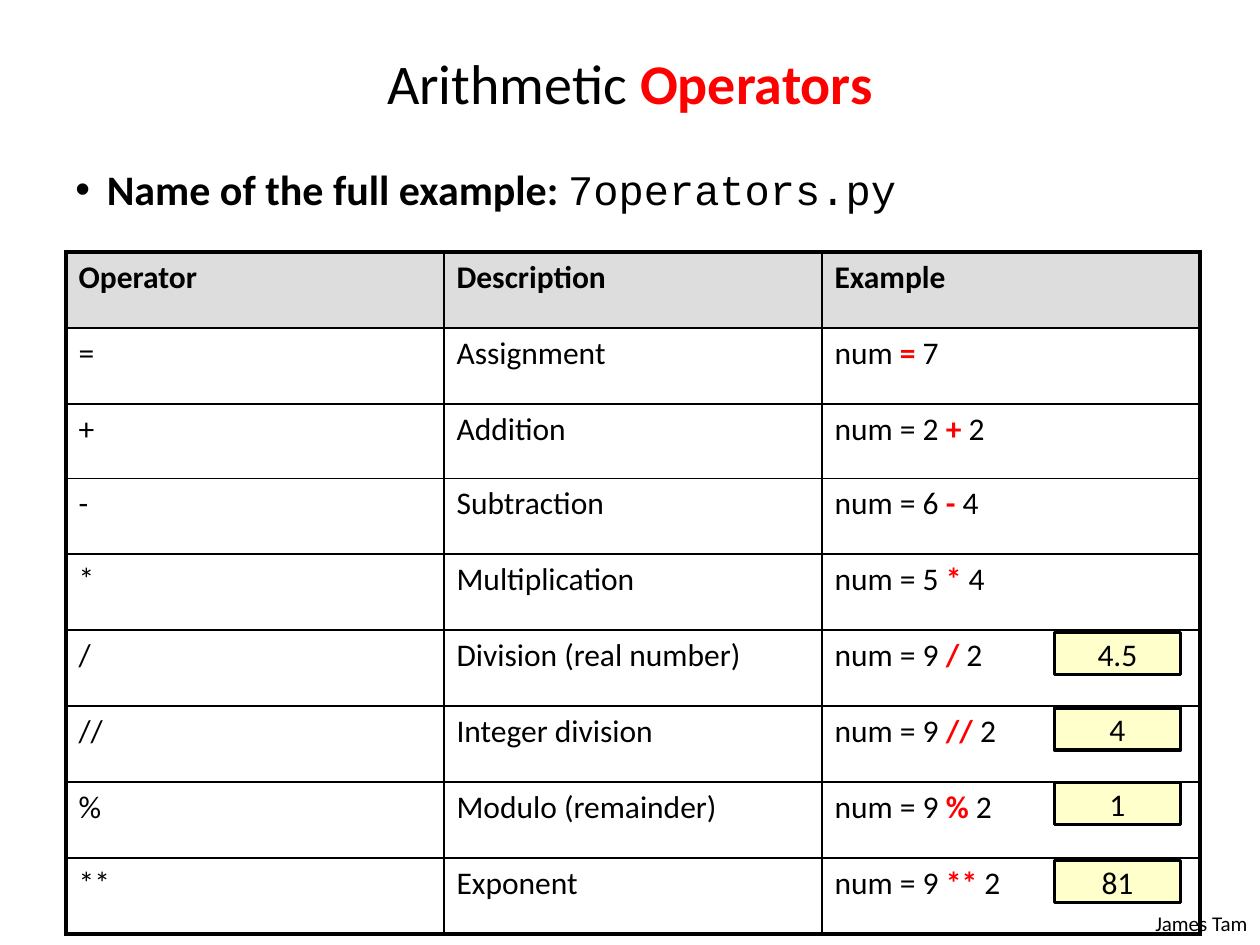
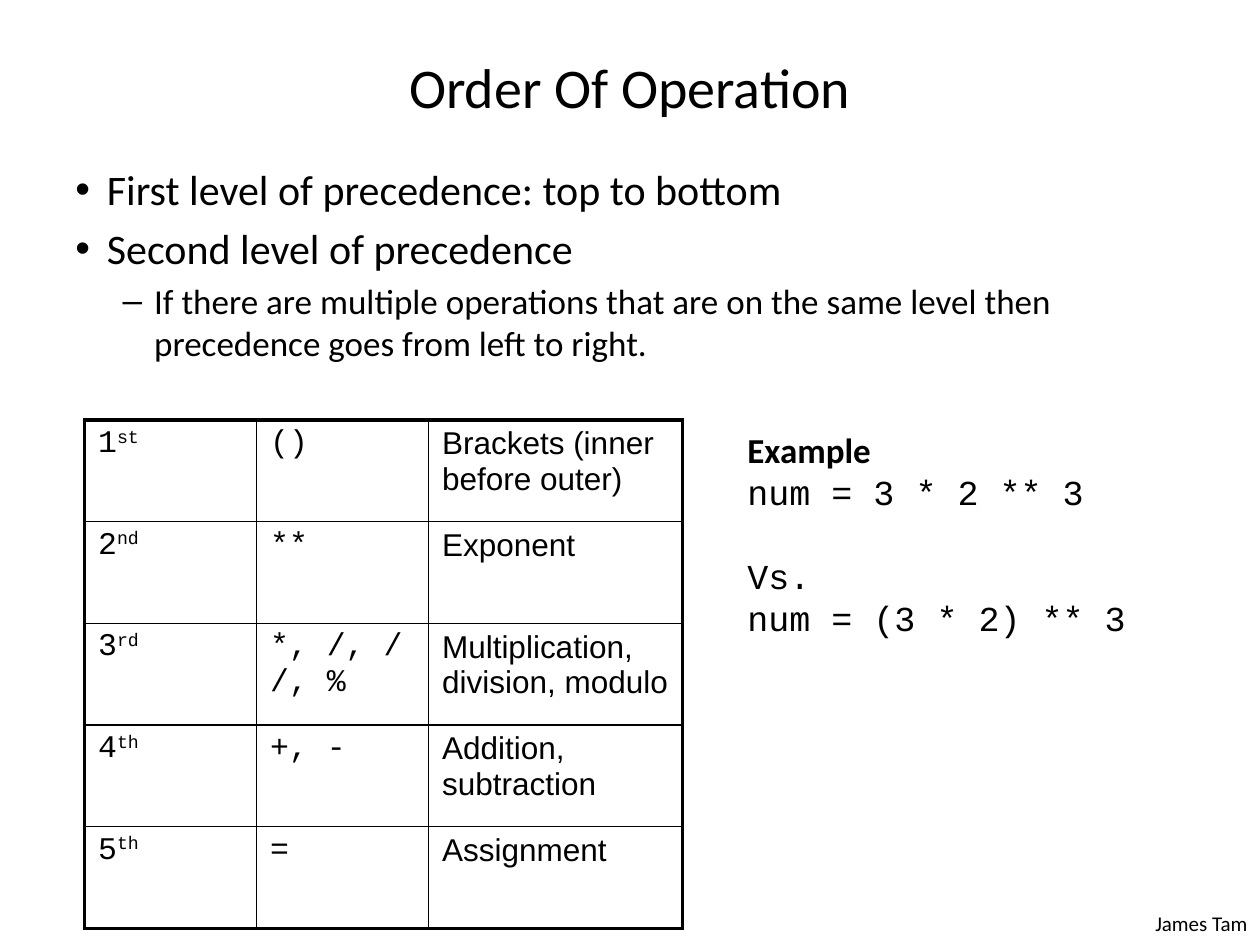
"""Build two slides on arithmetic operators and their order of operation."""
from dataclasses import dataclass, replace

from lxml.etree import SubElement
from pptx import Presentation
from pptx.dml.color import RGBColor
from pptx.enum.shapes import MSO_SHAPE as Shape
from pptx.enum.text import MSO_ANCHOR as Anchor, PP_ALIGN as Align
from pptx.oxml.ns import qn
from pptx.util import Pt

BLACK = RGBColor(0, 0, 0)
RED = RGBColor(255, 0, 0)
HEADER_GREY = RGBColor(0xDD, 0xDD, 0xDD)
RESULT_YELLOW = RGBColor(0xFF, 0xFF, 0xCC)
SANS, MONO, ARIAL = "Calibri", "Courier New", "Arial"
THIN, THICK = 1, 2.25

OPERATORS = [
    ("=", "Assignment", "num ", "=", " 7"),
    ("+", "Addition", "num = 2 ", "+", " 2"),
    ("-", "Subtraction", "num = 6 ", "-", " 4"),
    ("*", "Multiplication", "num = 5 ", "*", " 4"),
    ("/", "Division (real number)", "num = 9 ", "/", " 2"),
    ("//", "Integer division", "num = 9 ", "//", " 2"),
    ("%", "Modulo (remainder)", "num = 9 ", "%", " 2"),
    ("**", "Exponent", "num = 9 ", "**", " 2"),
]
RESULTS = [("4.5", 361.5), ("4", 404.6), ("1", 447.1), ("81", 491.8)]
PRECEDENCE = [
    ("1", "st", "()", "Brackets (inner before outer)"),
    ("2", "nd", "**", "Exponent"),
    ("3", "rd", "*, /, //, %", "Multiplication, division, modulo"),
    ("4", "th", "+, -", "Addition, subtraction"),
    ("5", "th", "=", "Assignment"),
]


@dataclass
class Span:
    """A stretch of text in one style."""
    text: str
    size: float = 18
    font: str = SANS
    color: RGBColor = BLACK
    bold: bool = False
    raised: bool = False


def write_spans(para, spans, align=Align.LEFT):
    """Fill a paragraph with styled spans."""
    para.alignment = align
    for span in spans:
        run = para.add_run()
        run.text = span.text
        font = run.font
        font.name, font.size, font.bold = span.font, Pt(span.size), span.bold
        font.color.rgb = span.color
        if span.raised:
            font._element.set("baseline", "30000")


def add_box(page, left, top, width, height, paragraphs, align=Align.LEFT, anchor=Anchor.TOP):
    """Add a wrapping text box and return its paragraphs."""
    box = page.shapes.add_textbox(Pt(left), Pt(top), Pt(width), Pt(height))
    frame = box.text_frame
    frame.word_wrap = True
    frame.vertical_anchor = anchor
    for index, spans in enumerate(paragraphs):
        para = frame.add_paragraph() if index else frame.paragraphs[0]
        write_spans(para, spans, align)
    return frame.paragraphs


def add_bullets(page, items):
    """Add the body text, each item being a level and its spans."""
    paragraphs = add_box(page, 36, 90, 645, 424, [spans for _, spans in items])
    for para, (level, spans) in zip(paragraphs, items):
        para.space_before = Pt(spans[0].size * 0.2)
        properties = para._p.get_or_add_pPr()
        properties.set("marL", str(Pt(45 if level else 18)))
        properties.set("indent", str(Pt(-18)))
        SubElement(properties, qn("a:buFont")).set("typeface", ARIAL)
        SubElement(properties, qn("a:buChar")).set("char", "–" if level else "•")


def set_borders(cell, widths):
    """Draw the left, right, top and bottom borders of a cell."""
    properties = cell._tc.get_or_add_tcPr()
    for side, width in zip("LRTB", widths):
        line = SubElement(properties, qn(f"a:ln{side}"), w=str(Pt(width)))
        fill = SubElement(line, qn("a:solidFill"))
        SubElement(fill, qn("a:srgbClr"), val=str(BLACK))


def add_grid(page, left, top, widths, heights, rows, margin, header=False):
    """Add a table with a thick frame and thin inner lines."""
    last_row, last_column = len(heights) - 1, len(widths) - 1
    table = page.shapes.add_table(len(heights), len(widths), Pt(left), Pt(top),
                                  Pt(sum(widths)), Pt(sum(heights))).table
    table.first_row = table.horz_banding = False
    for column, width in zip(table.columns, widths):
        column.width = Pt(width)
    for r, (height, row) in enumerate(zip(heights, rows)):
        table.rows[r].height = Pt(height)
        for c, spans in enumerate(row):
            cell = table.cell(r, c)
            cell.margin_left = cell.margin_right = Pt(margin)
            write_spans(cell.text_frame.paragraphs[0], spans)
            edges = (c == 0, c == last_column, r == 0, r == last_row)
            set_borders(cell, [THICK if edge else THIN for edge in edges])
            if header and r == 0:
                cell.fill.solid()
                cell.fill.fore_color.rgb = HEADER_GREY
            else:
                cell.fill.background()


def add_result(page, text, top):
    """Add a yellow box holding the result of an example."""
    box = page.shapes.add_shape(Shape.RECTANGLE, Pt(602.6), Pt(top), Pt(72), Pt(24))
    box.shadow.inherit = False
    box.fill.solid()
    box.fill.fore_color.rgb = RESULT_YELLOW
    box.line.color.rgb = BLACK
    box.line.width = Pt(2)
    box.text_frame.vertical_anchor = Anchor.MIDDLE
    write_spans(box.text_frame.paragraphs[0], [Span(text)], Align.CENTER)


def add_page(deck, title, top, height):
    """Add a blank slide with its footer and title."""
    page = deck.slides.add_slide(deck.slide_layouts[6])
    add_box(page, 624, 517, 96, 21.6, [[Span("James Tam", 12)]], Align.RIGHT)
    add_box(page, 36, top, 648, height, [title], Align.CENTER, Anchor.MIDDLE)
    return page


def build_operators(deck):
    """Build the slide that lists the operators."""
    title = [Span("Arithmetic ", 32), Span("Operators", 32, color=RED, bold=True)]
    page = add_page(deck, title, 21.6, 50.4)
    label = Span("Name of the full example: ", 24, bold=True)
    add_bullets(page, [(0, [label, Span("7operators.py", 24, MONO)])])
    rows = [[[Span(name, bold=True)] for name in ("Operator", "Description", "Example")]]
    for symbol, description, before, operator, after in OPERATORS:
        example = [Span(before), Span(operator, color=RED, bold=True), Span(after)]
        rows.append([[Span(symbol)], [Span(description)], example])
    heights = [43.4] * 3 + [43.4] * 6
    heights[2] = 42.5
    add_grid(page, 37.7, 144, [216] * 3, heights, rows, 7.2, header=True)
    for text, top in RESULTS:
        add_result(page, text, top)


def build_precedence(deck):
    """Build the slide on the order of operation."""
    page = add_page(deck, [Span("Order Of Operation", 32)], 20.2, 57.6)
    add_bullets(page, [
        (0, [Span("First level of precedence: top to bottom", 24)]),
        (0, [Span("Second level of precedence", 24)]),
        (1, [Span("If there are multiple operations that are on the same level then "
                  "precedence goes from left to right.", 20)]),
    ])
    code = Span("", font=MONO)
    rows = [[[replace(code, text=number), replace(code, text=suffix, raised=True)],
             [replace(code, text=symbols)],
             [Span(description, font=ARIAL)]]
            for number, suffix, symbols, description in PRECEDENCE]
    add_grid(page, 48.2, 240, [98.3, 98.3, 145.4], [58.1] * 5, rows, 7.9)
    lines = ["num = 3 * 2 ** 3", "Vs.", "num = (3 * 2) ** 3"]
    example = add_box(page, 420, 241.2, 288, 128,
                      [[Span("Example", 20, bold=True)]]
                      + [[Span(line, 20, MONO)] for line in lines])
    for para in example:
        para.line_spacing = Pt(24)
    example[2].space_before = Pt(24)


def main():
    """Build and save the deck."""
    deck = Presentation()
    deck.slide_width, deck.slide_height = Pt(720), Pt(540)
    build_operators(deck)
    build_precedence(deck)
    deck.save("out.pptx")


if __name__ == "__main__":
    main()
